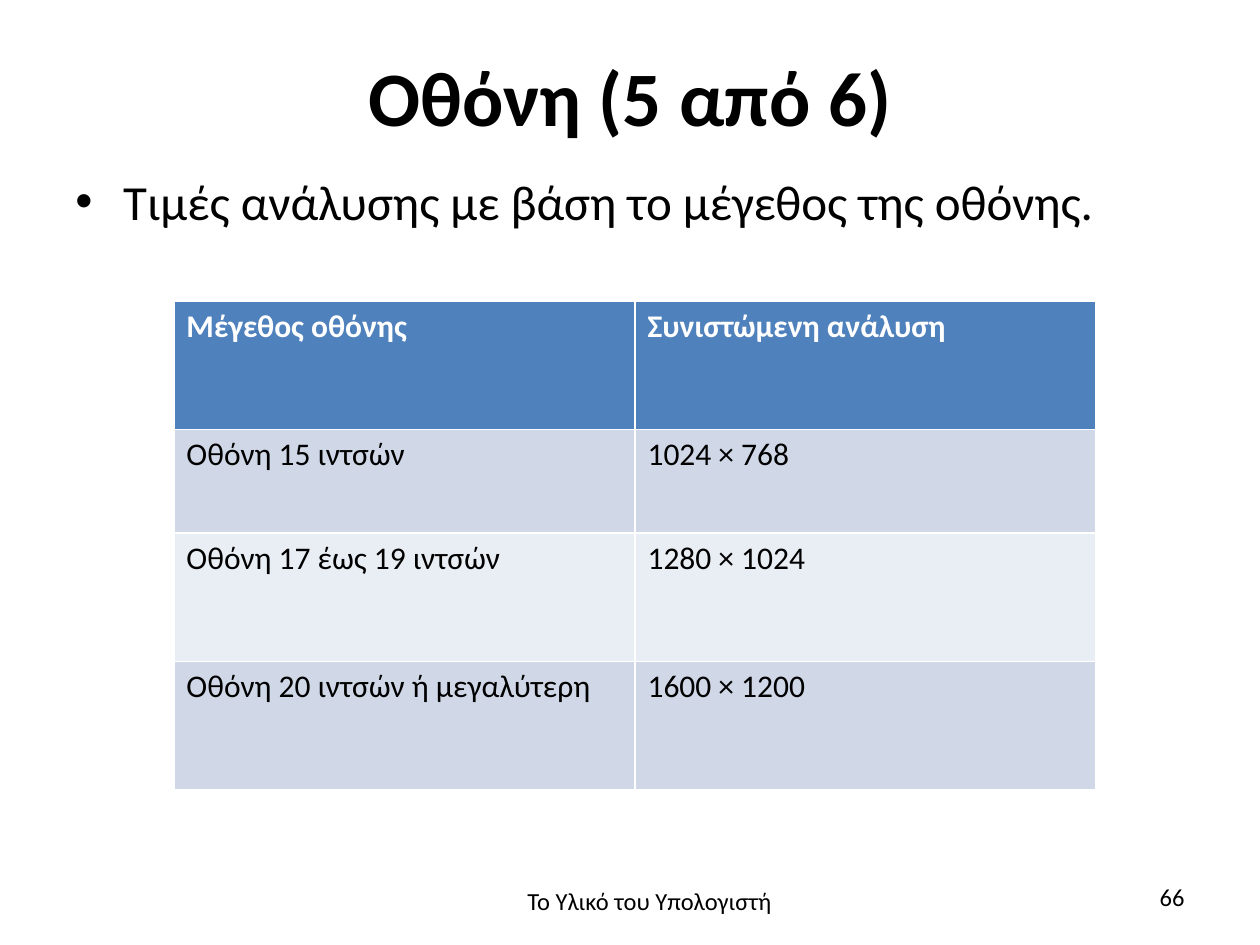
import lxml.etree
import pptx
import pptx.dml.color
import pptx.enum.text
import pptx.oxml.ns
import pptx.util

ALIGN = pptx.enum.text.PP_ALIGN
ANCHOR = pptx.enum.text.MSO_ANCHOR

RESOLUTIONS = [
    ("Μέγεθος οθόνης", "Συνιστώμενη ανάλυση"),
    ("Οθόνη 15 ιντσών", "1024 × 768"),
    ("Οθόνη 17 έως 19 ιντσών", "1280 × 1024"),
    ("Οθόνη 20 ιντσών ή μεγαλύτερη", "1600 × 1200"),
]

THEME = {
    "font": "Calibri",
    "ink": "000000",
    "paper": "FFFFFF",
    "header": "4F81BD",
    "bands": ("D0D8E8", "E9EDF4"),
    "title": 44,
    "point": 28,
    "cell": 18,
    "footer": 14,
    "rule": 1,
}

TEXTS = [
    {"text": "Οθόνη (5 από 6)", "grid": (5, 0.5, 90, 14.2), "size": "title",
     "bold": True, "align": ALIGN.CENTER, "anchor": ANCHOR.MIDDLE},
    {"text": "Τιμές ανάλυσης με βάση το μέγεθος της οθόνης.",
     "grid": (5, 13.1, 90, 5.5), "size": "point", "bullet": "•"},
    {"text": "Το Υλικό του Υπολογιστή", "grid": (34.1, 69.8, 34.9, 5.5),
     "size": "footer", "align": ALIGN.CENTER},
    {"text": "66", "grid": (71.7, 69.5, 23.3, 4), "size": "footer",
     "align": ALIGN.RIGHT},
]

COLUMNS, ROWS = 100, 75
TABLE_LEFT, TABLE_TOP = 13.8, 23.9
COLUMN_SPAN = 36.6
ROW_SPANS = (10.2, 8.2, 10.2, 10.2)
BULLET_INDENT = 3.8

deck = pptx.Presentation()
deck.slide_width = pptx.util.Inches(10)
deck.slide_height = pptx.util.Inches(7.5)
slide = deck.slides.add_slide(deck.slide_layouts[6])


def across(columns):
    return round(columns * deck.slide_width / COLUMNS)


def down(rows):
    return round(rows * deck.slide_height / ROWS)


def rgb(code):
    return pptx.dml.color.RGBColor.from_string(code)


def assign(target, values):
    for attribute, value in values.items():
        setattr(target, attribute, value)


def child(parent, tag, **attributes):
    return lxml.etree.SubElement(parent, pptx.oxml.ns.qn(tag), attributes)


def write(paragraph, wording, size, color, bold=False):
    run = paragraph.add_run()
    run.text = wording
    assign(run.font, {"name": THEME["font"], "size": pptx.util.Pt(THEME[size]),
                      "bold": bold})
    run.font.color.rgb = rgb(THEME[color])


def add_text(entry):
    left, top, width, height = entry["grid"]
    frame = slide.shapes.add_textbox(
        across(left), down(top), across(width), down(height)).text_frame
    assign(frame, {"word_wrap": True,
                   "vertical_anchor": entry.get("anchor", ANCHOR.TOP)})
    paragraph = frame.paragraphs[0]
    paragraph.alignment = entry.get("align", ALIGN.LEFT)
    if "bullet" in entry:
        properties = paragraph._p.get_or_add_pPr()
        indent = across(BULLET_INDENT)
        properties.set("marL", str(indent))
        properties.set("indent", str(-indent))
        child(properties, "a:buFont", typeface="Arial")
        child(properties, "a:buChar", char=entry["bullet"])
    write(paragraph, entry["text"], entry["size"], "ink", entry.get("bold", False))


def add_borders(cell):
    properties = cell._tc.get_or_add_tcPr()
    for side in ("a:lnL", "a:lnR", "a:lnT", "a:lnB"):
        line = child(properties, side, w=str(pptx.util.Pt(THEME["rule"])))
        child(child(line, "a:solidFill"), "a:srgbClr", val=THEME["paper"])


def add_resolutions():
    column_count = len(RESOLUTIONS[0])
    table = slide.shapes.add_table(
        len(RESOLUTIONS), column_count, across(TABLE_LEFT), down(TABLE_TOP),
        across(COLUMN_SPAN * column_count), down(sum(ROW_SPANS))).table
    for column in table.columns:
        column.width = across(COLUMN_SPAN)
    for index, (values, span) in enumerate(zip(RESOLUTIONS, ROW_SPANS)):
        heading = index == 0
        table.rows[index].height = down(span)
        shade = THEME["header"] if heading else THEME["bands"][(index - 1) % 2]
        for cell, wording in zip(table.rows[index].cells, values):
            add_borders(cell)
            cell.fill.solid()
            cell.fill.fore_color.rgb = rgb(shade)
            write(cell.text_frame.paragraphs[0], wording, "cell",
                  "paper" if heading else "ink", heading)


for entry in TEXTS:
    add_text(entry)
add_resolutions()
deck.save("out.pptx")
